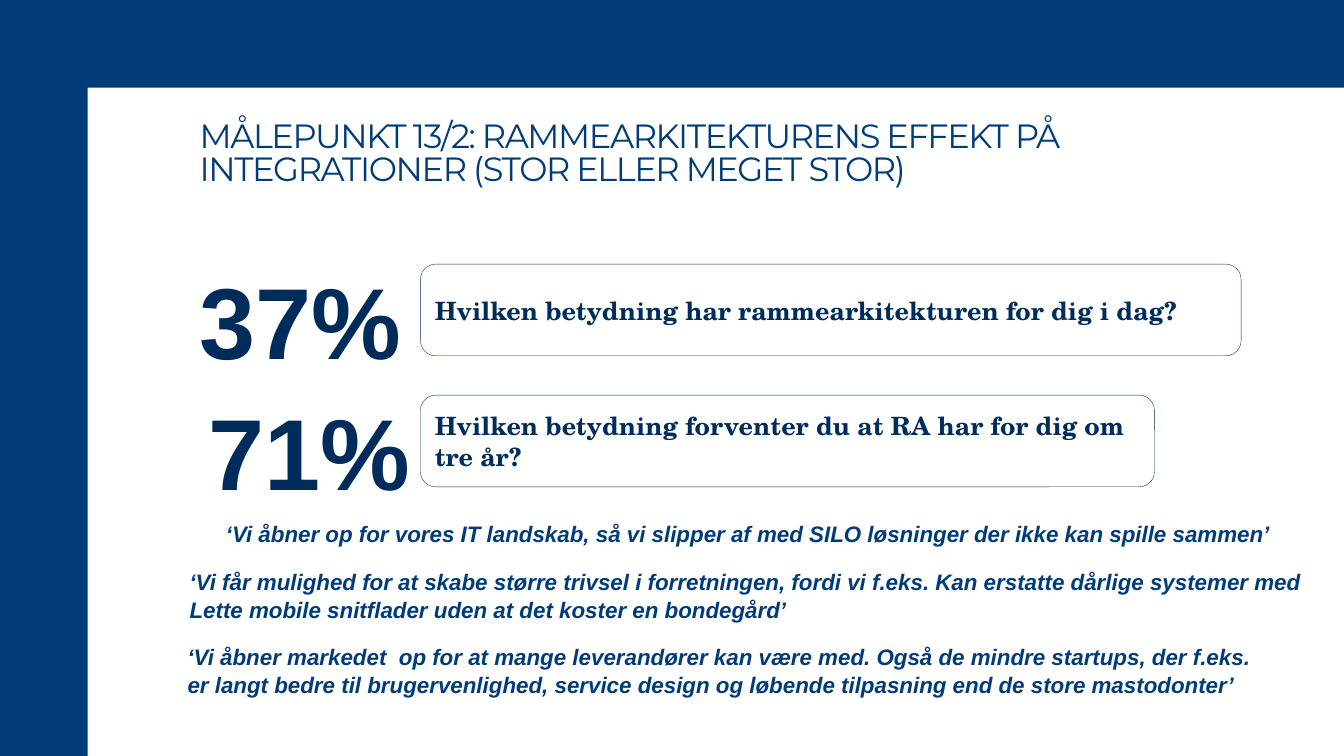
from pptx import Presentation
from pptx.dml.color import RGBColor
from pptx.enum import shapes, text
from pptx.util import Inches, Pt

BLUE = RGBColor(0x00, 0x3B, 0x7A)
NAVY = RGBColor(0x00, 0x2C, 0x5C)
OUTLINE = RGBColor(0x00, 0x2C, 0x5A)

WIDTH, HEIGHT, BAND = 13.33, 7.5, 0.87
TITLE = "MÅLEPUNKT 13/2: RAMMEARKITEKTURENS EFFEKT PÅ INTEGRATIONER (STOR ELLER MEGET STOR)"
FINDINGS = [
    ("37%", "Hvilken betydning har rammearkitekturen for dig i dag?", 1.98, 2.62, 8.14),
    ("71%", "Hvilken betydning forventer du at RA har for dig om tre år?", 2.07, 3.92, 7.28),
]
QUOTES = [
    ("‘Vi åbner op for vores IT landskab, så vi slipper af med SILO løsninger "
     "der ikke kan spille sammen’", 2.24, 5.15, 10.44, 0.28),
    ("‘Vi får mulighed for at skabe større trivsel i forretningen, fordi vi f.eks. "
     "Kan erstatte dårlige systemer med\n"
     "Lette mobile snitflader uden at det koster en bondegård’", 1.88, 5.63, 11.18, 0.56),
    ("‘Vi åbner markedet  op for at mange leverandører kan være med. "
     "Også de mindre startups, der f.eks.\n"
     "er langt bedre til brugervenlighed, service design og løbende tilpasning "
     "end de store mastodonter’", 1.86, 6.37, 10.75, 0.56),
]


def format_text(frame, font_name, size, color, bold=False, italic=False, spacing=None):
    """Give every paragraph of a frame the same type and line spacing."""
    for paragraph in frame.paragraphs:
        paragraph.alignment = text.PP_ALIGN.LEFT
        paragraph.line_spacing = spacing
        for run in paragraph.runs:
            run.font.name = font_name
            run.font.size = Pt(size)
            run.font.color.rgb = color
            run.font.bold = bold
            run.font.italic = italic


def add_label(slide, wording, left, top, width, height, wrap=False):
    """Add a text box without insets and return its text frame."""
    label = slide.shapes.add_textbox(Inches(left), Inches(top), Inches(width), Inches(height))
    frame = label.text_frame
    frame.margin_left = frame.margin_top = frame.margin_right = frame.margin_bottom = 0
    frame.word_wrap = wrap
    frame.auto_size = text.MSO_AUTO_SIZE.NONE if wrap else text.MSO_AUTO_SIZE.SHAPE_TO_FIT_TEXT
    frame.text = wording
    return frame


def add_frame_band(slide, width, height, band):
    """Draw the blue band along the top and left edges."""
    builder = slide.shapes.build_freeform(Inches(width), Inches(band), scale=1.0)
    corners = [(width, 0), (0, 0), (0, height), (band, height), (band, band)]
    builder.add_line_segments([(Inches(x), Inches(y)) for x, y in corners], close=True)
    edge_band = builder.convert_to_shape()
    edge_band.shadow.inherit = False
    edge_band.fill.solid()
    edge_band.fill.fore_color.rgb = BLUE
    edge_band.line.fill.background()


def add_title(slide, left, top, width, height):
    """Place the heading with one line of room below it."""
    frame = add_label(slide, TITLE, left, top, width, height, wrap=True)
    frame.vertical_anchor = text.MSO_ANCHOR.BOTTOM
    frame.margin_bottom = Inches(0.33)
    format_text(frame, "Montserrat", 24, BLUE, spacing=0.8)
    for run in frame.paragraphs[0].runs:
        run.font._element.set("spc", "-100")


def add_finding(slide, share, question, left, top, question_width):
    """Place a percentage and the rounded question box to its right."""
    question_box = slide.shapes.add_shape(
        shapes.MSO_SHAPE.ROUNDED_RECTANGLE,
        Inches(4.17), Inches(top), Inches(question_width), Inches(0.91))
    question_box.shadow.inherit = False
    question_box.fill.background()
    question_box.line.color.rgb = OUTLINE
    question_box.line.width = Pt(0.25)
    frame = question_box.text_frame
    frame.word_wrap = True
    frame.vertical_anchor = text.MSO_ANCHOR.MIDDLE
    frame.text = question
    format_text(frame, "TeX Gyre Schola", 18, NAVY, bold=True)

    share_frame = add_label(slide, share, left, top - 0.1, 2.02, 1.18)
    format_text(share_frame, "Arial", 72, NAVY, bold=True, spacing=1.04)


def add_quote(slide, quote, left, top, width, height):
    """Place one respondent quote."""
    frame = add_label(slide, quote, left, top, width, height)
    format_text(frame, "Arial", 16, BLUE, bold=True, italic=True, spacing=1.04)


def main():
    """Build and save the slide."""
    deck = Presentation()
    deck.slide_width, deck.slide_height = Inches(WIDTH), Inches(HEIGHT)
    slide = deck.slides.add_slide(deck.slide_layouts[6])
    add_frame_band(slide, WIDTH, HEIGHT, BAND)
    add_title(slide, 1.98, 1.27, 9.27, 0.92)
    for finding in FINDINGS:
        add_finding(slide, *finding)
    for quote in QUOTES:
        add_quote(slide, *quote)
    deck.save("out.pptx")


if __name__ == "__main__":
    main()
